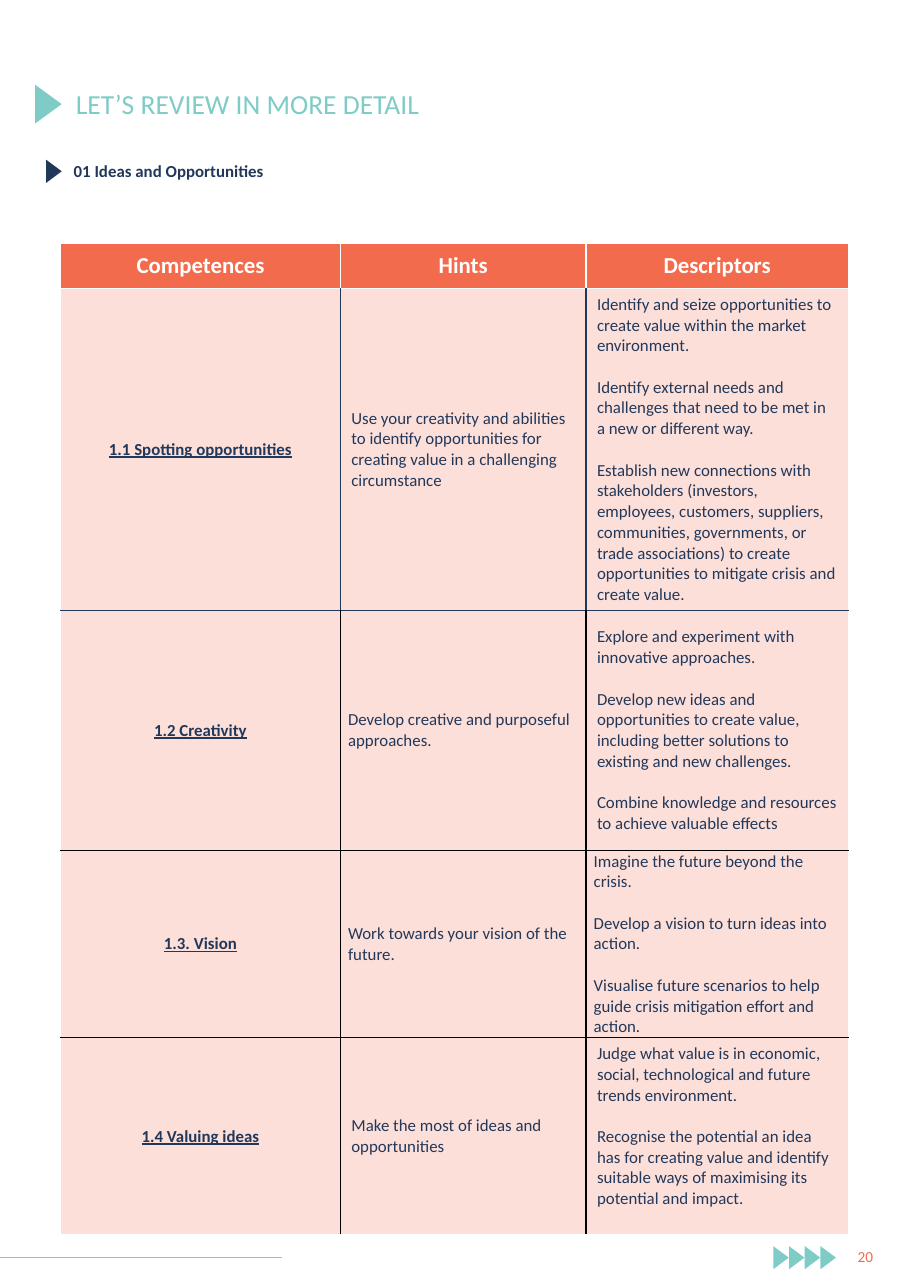
from lxml import etree
from pptx import Presentation
from pptx.dml.color import RGBColor
from pptx.enum.shapes import MSO_CONNECTOR
from pptx.enum.text import MSO_ANCHOR, PP_ALIGN
from pptx.oxml.ns import qn
from pptx.util import Inches, Pt

TEAL = RGBColor(0x7F, 0xCC, 0xC7)
NAVY = RGBColor(0x22, 0x38, 0x5A)
ORANGE = RGBColor(0xF2, 0x6B, 0x4D)
WHITE = RGBColor(0xFF, 0xFF, 0xFF)
BLACK = RGBColor(0, 0, 0)

COLUMN_WIDTHS = [2.54, 2.23, 2.38]
ROW_HEIGHTS = [0.41, 2.92, 2.18, 1.7, 1.79]
HEADERS = ["Competences", "Hints", "Descriptors"]
ROWS = [
    ("1.1 Spotting opportunities",
     "Use your creativity and abilities to identify opportunities for creating value "
     "in a challenging circumstance",
     ["Identify and seize opportunities to create value within the market environment.",
      "Identify external needs and challenges that need to be met in a new or different way.",
      "Establish new connections with stakeholders (investors, employees, customers, "
      "suppliers, communities, governments, or trade associations) to create "
      "opportunities to mitigate crisis and create value."]),
    ("1.2 Creativity",
     "Develop creative and purposeful approaches.",
     ["Explore and experiment with innovative approaches.",
      "Develop new ideas and opportunities to create value, including better solutions "
      "to existing and new challenges.",
      "Combine knowledge and resources to achieve valuable effects"]),
    ("1.3. Vision",
     "Work towards your vision of the future.",
     ["Imagine the future beyond the crisis.",
      "Develop a vision to turn ideas into action.",
      "Visualise future scenarios to help guide crisis mitigation effort and action."]),
    ("1.4 Valuing ideas",
     "Make the most of ideas and opportunities",
     ["Judge what value is in economic, social, technological and future trends environment.",
      "Recognise the potential an idea has for creating value and identify suitable ways "
      "of maximising its potential and impact."]),
]
# Border colours: one per horizontal line, and one per row for the inner verticals
HORIZONTALS = [WHITE, WHITE, NAVY, BLACK, BLACK, WHITE]
VERTICALS = [WHITE, NAVY, BLACK, BLACK, BLACK]
# Cells (row, column) with tighter margins
TIGHT_CELLS = {(2, 1), (3, 1), (3, 2)}
BLANK_LINE = 13.4


def format_paragraph(paragraph, size, color, bold=False, underline=False):
    for run in paragraph.runs:
        font = run.font
        font.name = "Calibri"
        font.size = Pt(size)
        font.color.rgb = color
        font.bold = bold
        font.underline = underline


def add_text(slide, text, left, top, width, height, size, color,
             bold=False, align=None, anchor=MSO_ANCHOR.MIDDLE, heading=True):
    text_frame = slide.shapes.add_textbox(
        Inches(left), Inches(top), Inches(width), Inches(height)).text_frame
    text_frame.word_wrap = True
    text_frame.vertical_anchor = anchor
    text_frame.text = text
    paragraph = text_frame.paragraphs[0]
    paragraph.alignment = align
    if heading:
        paragraph.line_spacing = 0.9
        paragraph.space_before = Pt(8.3)
    format_paragraph(paragraph, size, color, bold)


def add_arrow(slide, left, top, width, height, color):
    builder = slide.shapes.build_freeform(Inches(left), Inches(top))
    builder.add_line_segments([
        (Inches(left + width), Inches(top + height / 2)),
        (Inches(left), Inches(top + height))])
    shape = builder.convert_to_shape()
    shape.shadow.inherit = False
    shape.fill.solid()
    shape.fill.fore_color.rgb = color
    shape.line.fill.background()


def add_rule(slide, left, right, y, color):
    connector = slide.shapes.add_connector(
        MSO_CONNECTOR.STRAIGHT, Inches(left), Inches(y), Inches(right), Inches(y))
    connector.line.color.rgb = color
    connector.line.width = Pt(0.75)
    etree.SubElement(connector.element.spPr, qn("a:effectLst"))


def fill_cell(cell, color, opacity=None):
    cell.fill.solid()
    cell.fill.fore_color.rgb = color
    if opacity:
        color_element = cell.fill._xPr.find(".//" + qn("a:srgbClr"))
        etree.SubElement(color_element, qn("a:alpha"), val=str(opacity * 1000))


def set_borders(cell, colors):
    properties = cell._tc.get_or_add_tcPr()
    for index, (side, color) in enumerate(zip("LRTB", colors)):
        line = etree.Element(qn("a:ln" + side), w=str(Pt(1)))
        fill = etree.SubElement(line, qn("a:solidFill"))
        etree.SubElement(fill, qn("a:srgbClr"), val=str(color))
        properties.insert(index, line)


def write_cell(cell, row, column, content):
    cell.vertical_anchor = MSO_ANCHOR.MIDDLE
    text_frame = cell.text_frame
    text_frame.text = "\n".join(content) if isinstance(content, list) else content
    header = row == 0
    label = column == 0
    for index, paragraph in enumerate(text_frame.paragraphs):
        paragraph.alignment = PP_ALIGN.CENTER if header or label else PP_ALIGN.LEFT
        if index:
            paragraph.space_before = Pt(BLANK_LINE)
        if header:
            format_paragraph(paragraph, 14.9, WHITE, bold=True)
        else:
            format_paragraph(paragraph, 11, NAVY, bold=label, underline=label)


def add_competence_table(slide):
    table = slide.shapes.add_table(
        len(ROW_HEIGHTS), len(COLUMN_WIDTHS), Inches(0.55), Inches(2.21),
        Inches(sum(COLUMN_WIDTHS)), Inches(sum(ROW_HEIGHTS))).table
    for column, width in zip(table.columns, COLUMN_WIDTHS):
        column.width = Inches(width)
    for row, height in zip(table.rows, ROW_HEIGHTS):
        row.height = Inches(height)

    last_column = len(COLUMN_WIDTHS) - 1
    for row, contents in enumerate([HEADERS] + ROWS):
        for column, content in enumerate(contents):
            cell = table.cell(row, column)
            write_cell(cell, row, column, content)
            fill_cell(cell, ORANGE, 21 if row else None)
            set_borders(cell, [
                VERTICALS[row] if column > 0 else WHITE,
                VERTICALS[row] if column < last_column else WHITE,
                HORIZONTALS[row], HORIZONTALS[row + 1]])
            if (row, column) in TIGHT_CELLS:
                cell.margin_left = cell.margin_right = Inches(0.07)
                cell.margin_top = cell.margin_bottom = 0
    # The last descriptors sit one line above the middle of the row
    table.cell(len(ROWS), last_column).margin_bottom = Inches(0.24)


def main():
    presentation = Presentation()
    presentation.slide_width = Inches(8.27)
    presentation.slide_height = Inches(11.69)
    slide = presentation.slides.add_slide(presentation.slide_layouts[6])

    # Footer: rule, row of arrows, page number
    add_rule(slide, 0, 2.56, 11.41, TEAL)
    for index in range(4):
        add_arrow(slide, 7.02 + index * 0.143, 11.31, 0.14, 0.21, TEAL)
    add_text(slide, "20", 7.66, 11.26, 0.39, 0.29, 10, ORANGE,
             align=PP_ALIGN.CENTER, heading=False)

    # Headings
    add_text(slide, "LET’S REVIEW IN MORE DETAIL", 0.59, 0.61, 7.15, 0.7, 18, TEAL)
    add_arrow(slide, 0.32, 0.77, 0.24, 0.35, TEAL)
    add_arrow(slide, 0.42, 1.45, 0.14, 0.21, NAVY)
    add_text(slide, "01 Ideas and Opportunities", 0.57, 1.43, 7.15, 0.55, 11, NAVY,
             bold=True, align=PP_ALIGN.JUSTIFY, anchor=MSO_ANCHOR.TOP)

    add_competence_table(slide)
    presentation.save("out.pptx")


if __name__ == "__main__":
    main()
